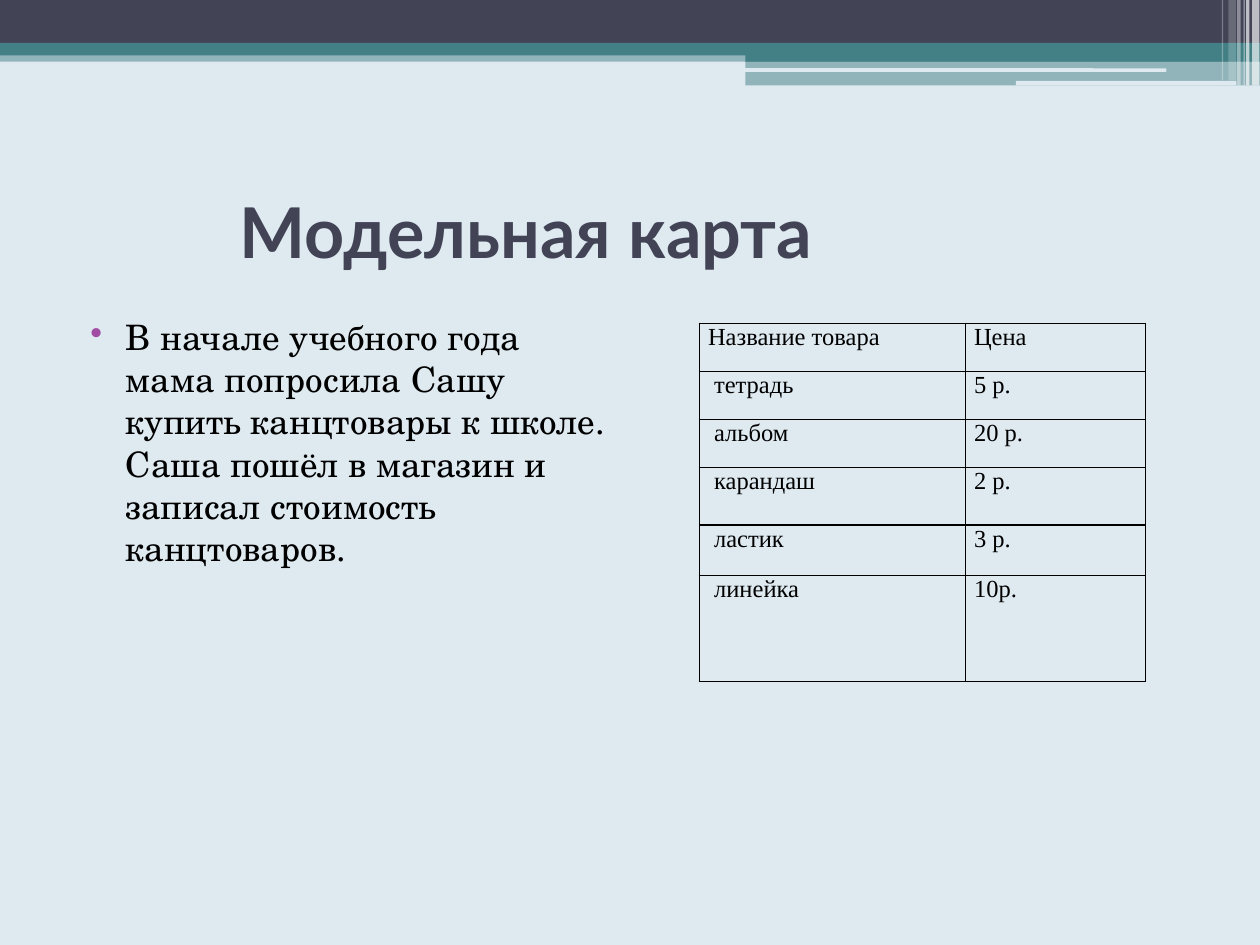
import pptx
import pptx.util
import pptx.dml.color
import pptx.enum.shapes
import pptx.enum.text
import pptx.oxml
import pptx.oxml.ns
import lxml.etree

Pt = pptx.util.Pt
RGB = pptx.dml.color.RGBColor
SHAPE = pptx.enum.shapes.MSO_SHAPE
ANCHOR = pptx.enum.text.MSO_ANCHOR
qn = pptx.oxml.ns.qn

PALE = RGB(0xDE, 0xE9, 0xF0)
TEAL = RGB(0x43, 0x80, 0x86)
DARK = RGB(0x42, 0x44, 0x56)
PLUM = RGB(0xA0, 0x4D, 0xA3)
BLACK = RGB(0, 0, 0)
WHITE = RGB(0xFF, 0xFF, 0xFF)

# left, top, width, height, colour, opacity in percent
BANDS = [
    (0, 28.8, 720, 6.5, TEAL, 50),
    (0, 0, 720, 24.5, DARK, 100),
    (0, 24.5, 720, 7.2, TEAL, 100),
    (426, 28, 294, 7.2, TEAL, 100),
    (426, 34.9, 294, 14, TEAL, 50),
]
SLOTS = [(425.5, 39, 241, 2), (580.5, 46.2, 126, 2.6)]
# left, width, height, opacity in percent
STRIPES = [
    (715.5, 4.2, 48.8, 65),
    (712, 2, 48.8, 65),
    (710.6, 0.7, 48.8, 60),
    (707, 2, 48.8, 40),
    (702, 4.3, 46, 20),
    (698.2, 0.7, 46, 30),
]
GOODS = [
    ("Название товара", "Цена"),
    ("тетрадь", "5 р."),
    ("альбом", "20 р."),
    ("карандаш", "2 р."),
    ("ластик", "3 р."),
    ("линейка", "10р."),
]
WIDTHS = [152, 103]
HEIGHTS = [27.4, 27.4, 27.4, 33, 28.8, 60.4]
STORY = ("В начале учебного года мама попросила Сашу купить канцтовары "
         "к школе. Саша пошёл в магазин и записал стоимость канцтоваров.")


class Deck:
    head, body, grid = "Lato", "TeX Gyre Schola", "Times New Roman"

    def __init__(self):
        self.file = pptx.Presentation()
        self.file.slide_width, self.file.slide_height = Pt(720), Pt(540)
        self.slide = self.file.slides.add_slide(self.file.slide_layouts[6])
        fill = self.slide.background.fill
        fill.solid()
        fill.fore_color.rgb = PALE

    def bar(self, left, top, width, height, color, alpha=100,
            kind=SHAPE.RECTANGLE):
        shape = self.slide.shapes.add_shape(
            kind, Pt(left), Pt(top), Pt(width), Pt(height))
        shape.shadow.inherit = False
        shape.line.fill.background()
        shape.fill.solid()
        shape.fill.fore_color.rgb = color
        if alpha < 100:
            tint = shape.fill._xPr.find(".//" + qn("a:srgbClr"))
            lxml.etree.SubElement(tint, qn("a:alpha"), val=str(alpha * 1000))

    def style(self, para, name, size, color, bold=False):
        font = para.font
        font.name, font.size, font.bold = name, Pt(size), bold
        font.color.rgb = color

    def text(self, words, left, top, width, height, anchor=ANCHOR.TOP):
        box = self.slide.shapes.add_textbox(
            Pt(left), Pt(top), Pt(width), Pt(height))
        frame = box.text_frame
        frame.word_wrap = True
        frame.vertical_anchor = anchor
        frame.text = words
        return frame

    def title(self, words):
        frame = self.text(words, 36, 90, 648, 84, ANCHOR.MIDDLE)
        frame.margin_left = Pt(101)
        self.style(frame.paragraphs[0], self.head, 40, DARK, True)

    def point(self, words):
        para = self.text(words, 36, 177, 318, 356).paragraphs[0]
        para.space_before = Pt(3)
        self.style(para, self.body, 20, BLACK)
        props = para._p.get_or_add_pPr()
        props.set("marL", str(Pt(28.8)))
        props.set("indent", str(Pt(-20.2)))
        tint = lxml.etree.Element(qn("a:buClr"))
        lxml.etree.SubElement(tint, qn("a:srgbClr"), val=str(PLUM))
        mark = lxml.etree.Element(qn("a:buChar"), char="•")
        last = props.find(qn("a:defRPr"))
        for item in (tint, mark):
            last.addprevious(item)

    def edge(self, cell):
        """Draw a thin black border on all four sides."""
        props = cell._tc.get_or_add_tcPr()
        for spot, side in enumerate(("lnL", "lnR", "lnT", "lnB")):
            line = lxml.etree.Element(qn("a:" + side), w=str(Pt(1)))
            fill = lxml.etree.SubElement(line, qn("a:solidFill"))
            lxml.etree.SubElement(fill, qn("a:srgbClr"), val=str(BLACK))
            props.insert(spot, line)

    def table(self, rows, left, top):
        table = self.slide.shapes.add_table(
            len(rows), len(WIDTHS), Pt(left), Pt(top),
            Pt(sum(WIDTHS)), Pt(sum(HEIGHTS))).table
        table.first_row = table.horz_banding = False
        for col, width in zip(table.columns, WIDTHS):
            col.width = Pt(width)
        for r, (row, height) in enumerate(zip(rows, HEIGHTS)):
            table.rows[r].height = Pt(height)
            for c, words in enumerate(row):
                cell = table.cell(r, c)
                cell.text = words
                inset = r > 0 and c == 0
                cell.margin_left = Pt(8.5 if inset else 5)
                cell.margin_right = Pt(5)
                cell.margin_top = cell.margin_bottom = 0
                cell.fill.background()
                self.style(cell.text_frame.paragraphs[0],
                           self.grid, 14, BLACK)
                self.edge(cell)


def main():
    deck = Deck()
    for band in BANDS:
        deck.bar(*band)
    for slot in SLOTS:
        deck.bar(*slot, PALE, kind=SHAPE.ROUNDED_RECTANGLE)
    for left, width, height, alpha in STRIPES:
        deck.bar(left, 0, width, height, WHITE, alpha)
    deck.title("Модельная карта")
    deck.point(STORY)
    deck.table(GOODS, 399.6, 185)
    deck.file.save("out.pptx")


if __name__ == "__main__":
    main()
